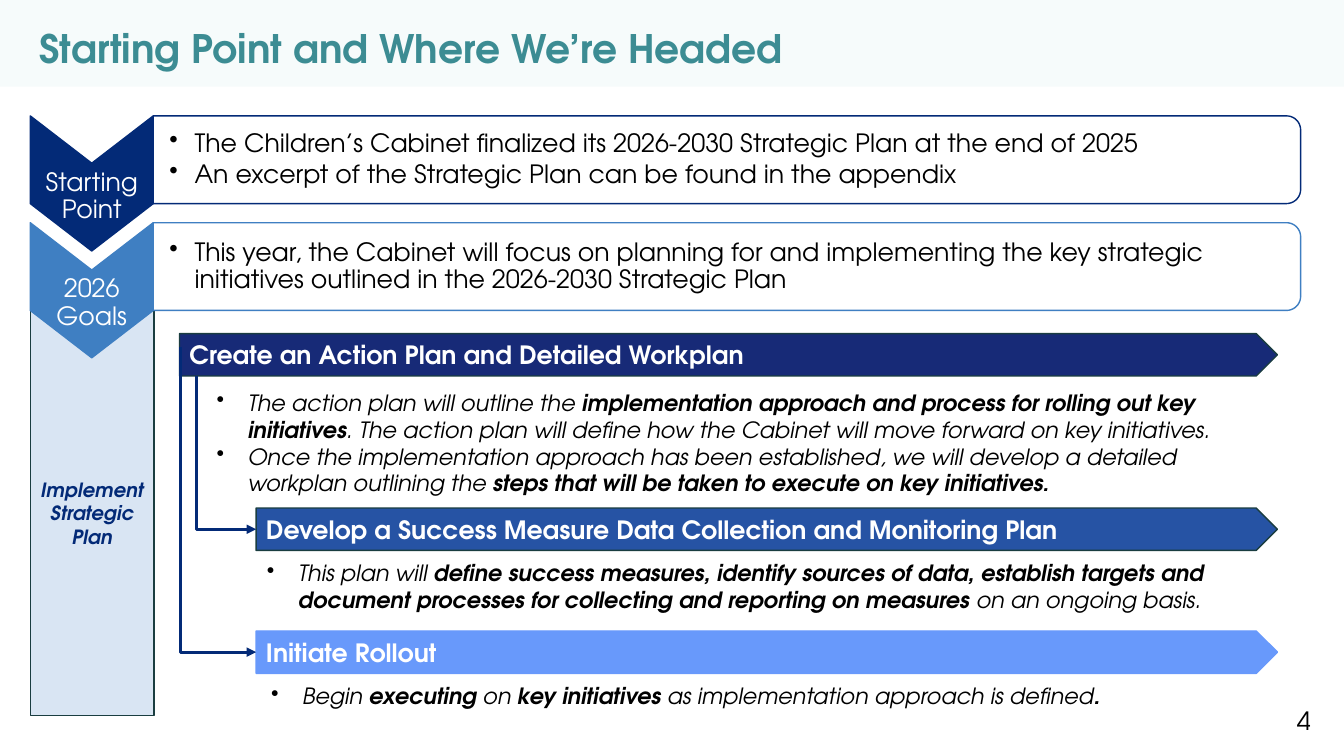
from dataclasses import dataclass
from math import cos, pi, sin

from lxml.etree import SubElement
from pptx import Presentation
from pptx.dml.color import RGBColor
from pptx.enum.shapes import MSO_CONNECTOR, MSO_SHAPE
from pptx.enum.text import MSO_ANCHOR, PP_ALIGN
from pptx.oxml.ns import qn
from pptx.util import Inches, Pt

ELBOW = MSO_CONNECTOR.ELBOW
RECT, PLATE = MSO_SHAPE.RECTANGLE, MSO_SHAPE.PENTAGON
TOP, MIDDLE = MSO_ANCHOR.TOP, MSO_ANCHOR.MIDDLE
LEFT, CENTER, RIGHT = PP_ALIGN.LEFT, PP_ALIGN.CENTER, PP_ALIGN.RIGHT


@dataclass(frozen=True)
class Theme:
    font: str = "TeX Gyre Adventor"
    band: str = "A9D8DC"
    title: str = "3C8C93"
    navy: str = "032A77"
    blue: str = "3F7FC2"
    pale: str = "D9E5F3"
    edge: str = "1A3D40"
    deep: str = "172A77"
    royal: str = "2653A4"
    sky: str = "6899FB"
    white: str = "FFFFFF"
    black: str = "000000"
    head: int = 28
    body: int = 18
    note: int = 16
    side: int = 14


@dataclass(frozen=True)
class Stage:
    top: float
    color: str
    label: str
    points: tuple[str, ...]


@dataclass(frozen=True)
class Bar:
    left: float
    top: float
    fill: str
    edge: str
    label: str


@dataclass(frozen=True)
class Note:
    left: float
    top: float
    width: float
    height: float
    points: tuple[str, ...]


@dataclass(frozen=True)
class Elbow:
    left: float
    top: float
    right: float
    bottom: float


THEME = Theme()
EDGE, SPLIT, END = 0.3, 1.52, 12.9
SIDE, NOTCH, CURVE = 0.87, 0.47, 0.14
BAR_END, BAR_HIGH = 12.67, 0.42

STAGES = (
    Stage(1.15, THEME.navy, "Starting Point", (
        "The Children’s Cabinet finalized its 2026-2030 Strategic Plan at the end of 2025",
        "An excerpt of the Strategic Plan can be found in the appendix")),
    Stage(2.21, THEME.blue, "2026 Goals", (
        "This year, the Cabinet will focus on planning for and implementing the key strategic "
        "initiatives outlined in the 2026-2030 Strategic Plan",)),
)
BARS = (
    Bar(1.78, 3.31, THEME.deep, THEME.edge, "Create an Action Plan and Detailed Workplan"),
    Bar(2.54, 5.04, THEME.royal, THEME.edge,
        "Develop a Success Measure Data Collection and Monitoring Plan"),
    Bar(2.54, 6.26, THEME.sky, THEME.sky, "Initiate Rollout"),
)
NOTES = (
    Note(2.05, 3.81, 10.62, 1.21, (
        "The action plan will outline the *implementation approach and process for rolling out "
        "key initiatives*. The action plan will define how the Cabinet will move forward on "
        "key initiatives.",
        "Once the implementation approach has been established, we will develop a detailed "
        "workplan outlining the *steps that will be taken to execute on key initiatives.*")),
    Note(2.55, 5.5, 10.47, 0.66, (
        "This plan will *define success measures, identify sources of data, establish targets "
        "and document processes for collecting and reporting on measures *on an ongoing basis.",)),
    Note(2.59, 6.72, 9.96, 0.38, (
        "Begin *executing* on *key initiatives *as implementation approach is defined*.*",)),
)
ELBOWS = (Elbow(1.95, 3.73, 2.54, 5.25), Elbow(1.79, 3.44, 2.54, 6.47))


def write(shape, *lines: str, size: int, color: str, bold=False, italic=False, align=LEFT,
          anchor=TOP, pads=(0.1, 0.05, 0.1, 0.05), space=1.0, after=0.0, indent=0.0) -> None:
    frame = shape.text_frame
    frame.word_wrap = True
    frame.vertical_anchor = anchor
    (frame.margin_left, frame.margin_top,
     frame.margin_right, frame.margin_bottom) = map(Inches, pads)
    for row, line in enumerate(lines):
        para = frame.add_paragraph() if row else frame.paragraphs[0]
        para.alignment = align
        para.line_spacing = space
        para.space_after = Pt(after)
        if indent:
            props = para._p.get_or_add_pPr()
            props.set("marL", str(Inches(indent)))
            props.set("indent", str(-Inches(indent)))
            SubElement(props, qn("a:buChar"), char="•")
        for part, words in enumerate(line.split("*")):
            if words:
                run = para.add_run()
                run.text = words
                font = run.font
                font.name, font.size = THEME.font, Pt(size)
                font.bold, font.italic = bold or part % 2 == 1, italic
                font.color.rgb = RGBColor.from_string(color)


def paint(shape, fill: str, edge: str = "", alpha: int = 100) -> None:
    shape.shadow.inherit = False
    shape.fill.solid()
    shape.fill.fore_color.rgb = RGBColor.from_string(fill)
    if alpha < 100:
        tint = shape._element.spPr.find(qn("a:solidFill"))[0]
        SubElement(tint, qn("a:alpha"), val=str(alpha * 1000))
    if edge:
        shape.line.color.rgb = RGBColor.from_string(edge)
        shape.line.width = Pt(1)
    else:
        shape.line.fill.background()


def block(shapes, kind, left: float, top: float, width: float, height: float):
    return shapes.add_shape(kind, *map(Inches, (left, top, width, height)))


def label(shapes, left: float, top: float, width: float, height: float):
    return shapes.add_textbox(*map(Inches, (left, top, width, height)))


def outline(shapes, points: list[tuple[float, float]]):
    spots = [(Inches(x), Inches(y)) for x, y in points]
    path = shapes.build_freeform(*spots[0])
    path.add_line_segments(spots[1:], close=True)
    return path.convert_to_shape()


def draw_stage(shapes, stage: Stage) -> None:
    top, low, mid = stage.top, stage.top + SIDE, (EDGE + SPLIT) / 2
    arrow = outline(shapes, [(SPLIT, top), (SPLIT, low), (mid, low + NOTCH),
                             (EDGE, low), (EDGE, top), (mid, top + NOTCH)])
    paint(arrow, stage.color, stage.color)
    write(arrow, stage.label, size=THEME.body, color=THEME.white, align=CENTER,
          anchor=MIDDLE, pads=(0.01, 0.3, 0.01, 0.04), space=0.9)

    turns = [pi / 2 * step / 10 for step in range(11)]
    upper = [(END - CURVE + CURVE * sin(a), top + CURVE - CURVE * cos(a)) for a in turns]
    lower = [(x, top + low - y) for x, y in reversed(upper)]
    panel = outline(shapes, [(SPLIT, top), *upper, *lower, (SPLIT, low)])
    paint(panel, THEME.white, stage.color, alpha=90)
    write(panel, *stage.points, size=THEME.body, color=THEME.black, anchor=MIDDLE,
          pads=(0.16, 0.06, 0.06, 0.06), space=0.9, after=2.7, indent=0.25)


def draw_bar(shapes, bar: Bar) -> None:
    plate = block(shapes, PLATE, bar.left, bar.top, BAR_END - bar.left, BAR_HIGH)
    paint(plate, bar.fill, bar.edge)
    write(plate, bar.label, size=THEME.body, color=THEME.white, bold=True, anchor=MIDDLE)


def draw_note(shapes, note: Note) -> None:
    box = label(shapes, note.left, note.top, note.width, note.height)
    write(box, *note.points, size=THEME.note, color=THEME.black, italic=True, indent=0.31)


def draw_elbow(shapes, bend: Elbow) -> None:
    mid_x, mid_y = (bend.left + bend.right) / 2, (bend.top + bend.bottom) / 2
    half_x, half_y = (bend.bottom - bend.top) / 2, (bend.right - bend.left) / 2
    ends = (mid_x - half_x, mid_y - half_y, mid_x + half_x, mid_y + half_y)
    link = shapes.add_connector(ELBOW, *map(Inches, ends))
    link.line.color.rgb = RGBColor.from_string(THEME.navy)
    link.line.width = Pt(2.25)
    props = link._element.spPr
    frame = props.find(qn("a:xfrm"))
    frame.set("rot", str(270 * 60000))
    frame.set("flipH", "1")
    props.find(qn("a:prstGeom")).set("prst", "bentConnector2")
    SubElement(props.find(qn("a:ln")), qn("a:tailEnd"), type="triangle")
    SubElement(props, qn("a:effectLst"))


def main() -> None:
    deck = Presentation()
    deck.slide_width, deck.slide_height = Inches(13.33), Inches(7.5)
    shapes = deck.slides.add_slide(deck.slide_layouts[6]).shapes

    paint(block(shapes, RECT, 0, 0, 13.33, 0.86), THEME.band, alpha=10)
    write(label(shapes, 0.29, 0.24, 12.12, 0.63), "Starting Point and Where We’re Headed",
          size=THEME.head, color=THEME.title, bold=True, space=0.9)
    side = block(shapes, RECT, EDGE, 3.08, 1.23, 4.02)
    paint(side, THEME.pale, THEME.edge)
    write(side, "Implement Strategic Plan", size=THEME.side, color=THEME.navy, bold=True,
          italic=True, align=CENTER, anchor=MIDDLE, pads=(0.05,) * 4)

    for items, draw in ((STAGES, draw_stage), (BARS, draw_bar),
                        (NOTES, draw_note), (ELBOWS, draw_elbow)):
        for item in items:
            draw(shapes, item)
    write(label(shapes, 11.63, 6.95, 1.47, 0.4), "4", size=THEME.body,
          color=THEME.black, align=RIGHT)
    deck.save("out.pptx")


if __name__ == "__main__":
    main()
